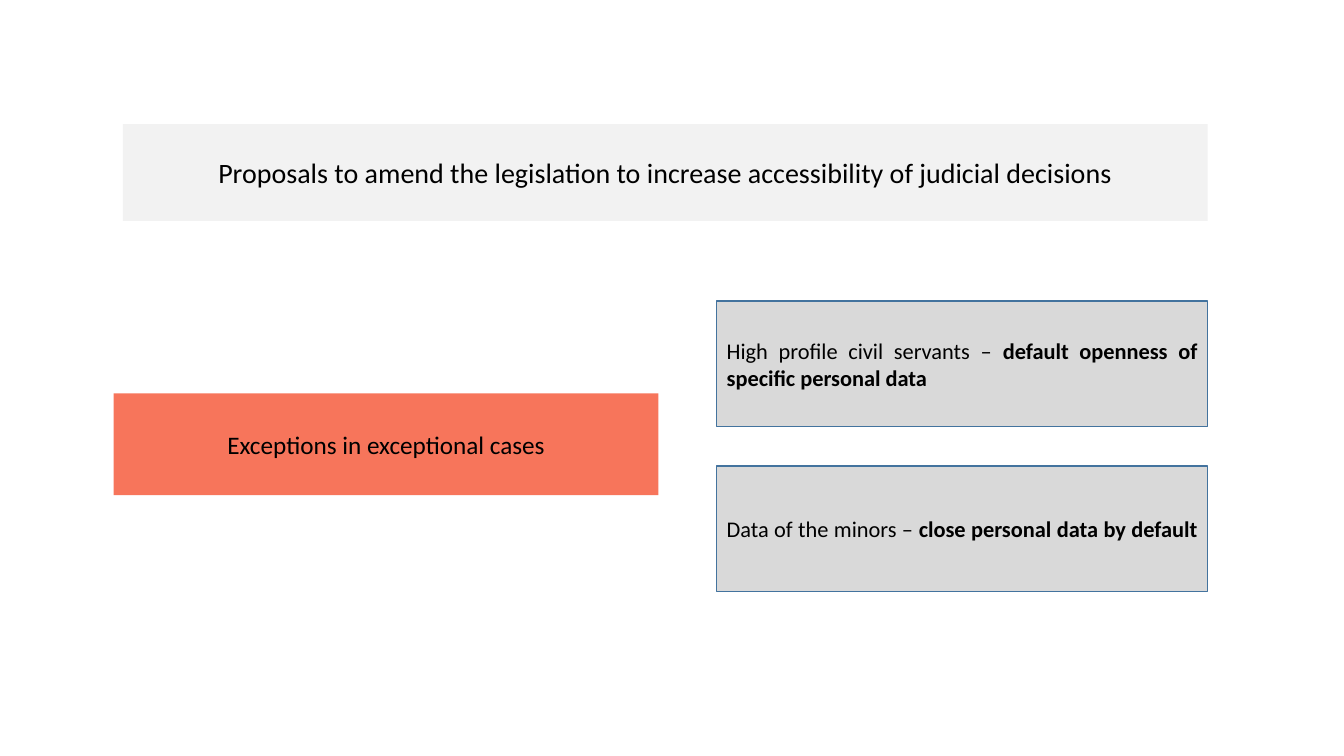
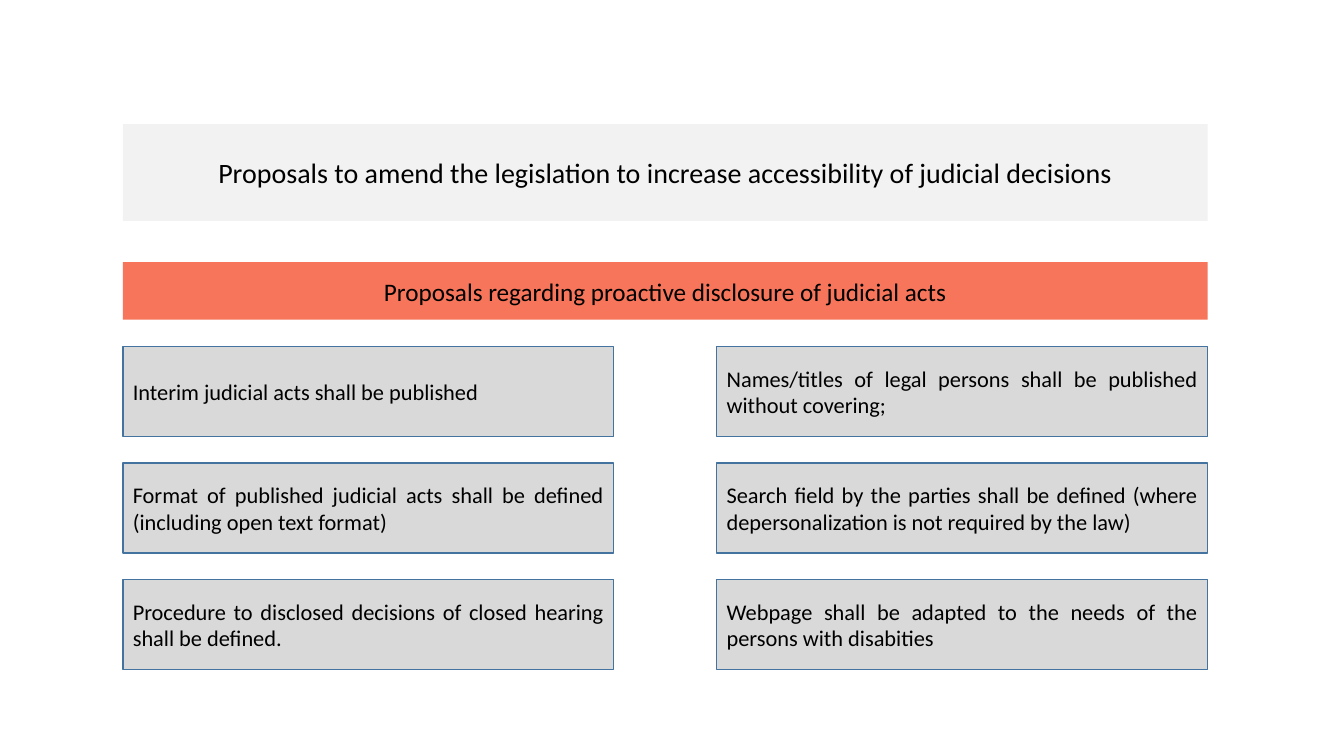
from pptx import Presentation
from pptx.dml.color import RGBColor
from pptx.enum.shapes import MSO_SHAPE
from pptx.enum.text import MSO_ANCHOR, PP_ALIGN
from pptx.util import Pt

BLACK = RGBColor(0x00, 0x00, 0x00)
PALE_GRAY = RGBColor(0xF2, 0xF2, 0xF2)
CARD_GRAY = RGBColor(0xD9, 0xD9, 0xD9)
CORAL = RGBColor(0xF7, 0x75, 0x5B)
STEEL_BLUE = RGBColor(0x43, 0x73, 0x9E)

LEFT = 87.8
RIGHT_COLUMN = 512
FULL_WIDTH = 774.8
CARD_WIDTH = 350.6
TITLE = "Proposals to amend the legislation to increase accessibility of judicial decisions"


class ProposalDeck:
    font = {"name": "Calibri"}

    def __init__(self):
        self.deck = Presentation()
        self.deck.slide_width = Pt(960)
        self.deck.slide_height = Pt(540)
        self.page = None

    def add_page(self):
        self.page = self.deck.slides.add_slide(self.deck.slide_layouts[6])
        self.box((LEFT, 88.6, FULL_WIDTH, 69.2), PALE_GRAY, [(TITLE, False)], 20)

    def box(self, frame, fill, spans, size, align=PP_ALIGN.CENTER, outline=None):
        box = self.page.shapes.add_shape(MSO_SHAPE.RECTANGLE, *map(Pt, frame))
        box.shadow.inherit = False
        box.fill.solid()
        box.fill.fore_color.rgb = fill
        if outline is None:
            box.line.fill.background()
        else:
            box.line.color.rgb = outline
            box.line.width = Pt(1)
        box.text_frame.word_wrap = True
        box.text_frame.vertical_anchor = MSO_ANCHOR.MIDDLE
        para = box.text_frame.paragraphs[0]
        para.alignment = align
        for text, bold in spans:
            span = para.add_run()
            span.text = text
            span.font.color.rgb = BLACK
            for key, value in {**self.font, "size": Pt(size), "bold": bold}.items():
                setattr(span.font, key, value)

    def band(self, frame, text):
        self.box(frame, CORAL, [(text, False)], 18)

    def card_column(self, left, top, height, pitch, cards):
        for row, spans in enumerate(cards):
            frame = (left, top + row * pitch, CARD_WIDTH, height)
            self.box(frame, CARD_GRAY, spans, 16, PP_ALIGN.JUSTIFY, STEEL_BLUE)


def build_exceptions(deck):
    deck.add_page()
    deck.band((81.2, 281, 389.2, 72.7), "Exceptions in exceptional cases")
    deck.card_column(RIGHT_COLUMN, 215, 89.8, 117.8, [
        [("High profile civil servants – ", False),
         ("default openness of specific personal data ", True)],
        [("Data of the minors – ", False),
         ("close personal data by default ", True)],
    ])


def build_disclosure(deck):
    deck.add_page()
    deck.band((LEFT, 187.2, FULL_WIDTH, 41.2),
              "Proposals regarding proactive disclosure of judicial acts")
    columns = {
        LEFT: [
            "Interim judicial acts shall be published",
            "Format of published judicial acts shall be defined (including open text format)",
            "Procedure to disclosed decisions of closed hearing shall be defined.",
        ],
        RIGHT_COLUMN: [
            "Names/titles of legal persons shall be published without covering;",
            "Search field by the parties shall be defined (where depersonalization"
            " is not required by the law)",
            "Webpage shall be adapted to the needs of the persons with disabities",
        ],
    }
    for left, texts in columns.items():
        deck.card_column(left, 247.6, 64.2, 83.2, [[(text, False)] for text in texts])


def main():
    deck = ProposalDeck()
    build_exceptions(deck)
    build_disclosure(deck)
    deck.deck.save("out.pptx")


if __name__ == "__main__":
    main()
